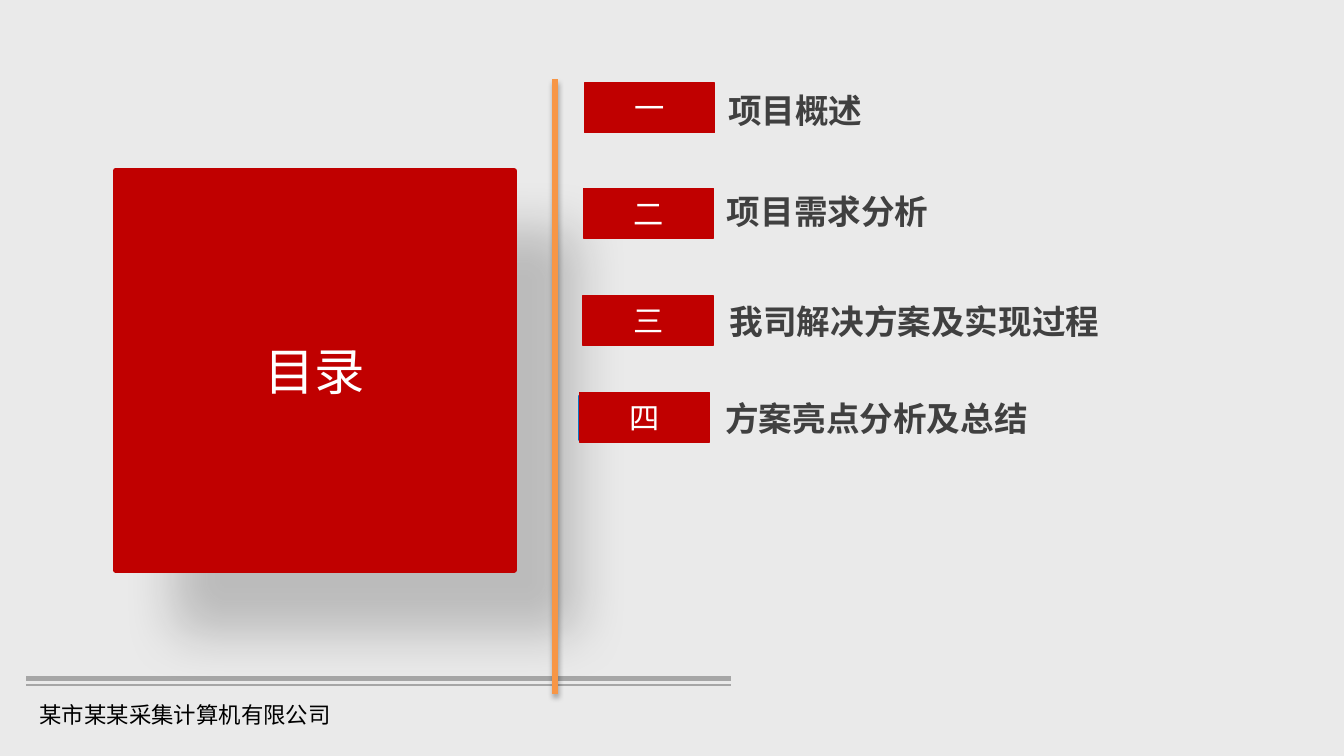
from dataclasses import dataclass

from lxml.etree import SubElement
from pptx import Presentation
from pptx.dml.color import RGBColor
from pptx.enum.shapes import MSO_CONNECTOR, MSO_SHAPE
from pptx.enum.text import MSO_ANCHOR, MSO_AUTO_SIZE, PP_ALIGN
from pptx.oxml.ns import qn
from pptx.util import Cm, Pt

COLOURS = {
    "background": "EAEAEA",
    "red": "C00000",
    "blue": "0975C2",
    "orange": "F79646",
    "rule": "A6A6A6",
    "label": "404040",
    "white": "FFFFFF",
    "black": "000000",
}
CJK_FONT = "Noto Sans CJK SC"
BADGE_WIDTH, BADGE_HEIGHT = 2.46, 0.94


@dataclass(frozen=True)
class Entry:
    """One line of the contents; lengths in centimetres."""
    number: str
    label: str
    badge_left: float
    badge_top: float
    label_left: float
    label_top: float
    label_width: float


@dataclass(frozen=True)
class Shadow:
    """Opacity in percent, blur and distance in points, angle in degrees."""
    opacity: int
    blur: float
    distance: float
    angle: int


ENTRIES = [
    Entry("一", "项目概述", 11.05, 1.57, 13.51, 1.57, 3.07),
    Entry("二", "项目需求分析", 11.03, 3.56, 13.49, 3.48, 4.37),
    Entry("三", "我司解决方案及实现过程", 11.02, 5.59, 13.54, 5.56, 7.57),
    Entry("四", "方案亮点分析及总结", 10.95, 7.42, 13.46, 7.39, 6.27),
]


def colour(name: str) -> RGBColor:
    return RGBColor.from_string(COLOURS[name])


def set_shadow(shape, shadow: Shadow | None) -> None:
    """Give the shape its own effect list, empty when there is no shadow."""
    effects = SubElement(shape.element.spPr, qn("a:effectLst"))
    if shadow:
        outer = SubElement(
            effects, qn("a:outerShdw"), blurRad=str(Pt(shadow.blur)),
            dist=str(Pt(shadow.distance)), dir=str(shadow.angle * 60000),
            algn="ctr", rotWithShape="0")
        tint = SubElement(outer, qn("a:srgbClr"), val=COLOURS["black"])
        SubElement(tint, qn("a:alpha"), val=str(shadow.opacity * 1000))


def paint(shape, name: str, line_width: float) -> None:
    shape.fill.solid()
    shape.fill.fore_color.rgb = colour(name)
    if line_width:
        shape.line.color.rgb = colour(name)
        shape.line.width = Pt(line_width)
    else:
        shape.line.fill.background()


def write(shape, text: str, size: float, ink: str, *, bold: bool = False,
          font: str = CJK_FONT, align=PP_ALIGN.LEFT, **frame_format) -> None:
    frame = shape.text_frame
    for name, value in frame_format.items():
        setattr(frame, name, value)
    para = frame.paragraphs[0]
    para.alignment = align
    span = para.add_run()
    span.text = text
    for name, value in {"size": Pt(size), "bold": bold, "name": font}.items():
        setattr(span.font, name, value)
    span.font.color.rgb = colour(ink)
    SubElement(span.font._element, qn("a:ea"), typeface=CJK_FONT)


def add_rectangle(page, left: float, top: float, width: float, height: float,
                  name: str, line_width: float = 0):
    shape = page.shapes.add_shape(
        MSO_SHAPE.RECTANGLE, Cm(left), Cm(top), Cm(width), Cm(height))
    shape.shadow.inherit = False
    paint(shape, name, line_width)
    return shape


def add_line(page, start: tuple[float, float], end: tuple[float, float],
             name: str, width: float, shadow: Shadow | None = None) -> None:
    line = page.shapes.add_connector(
        MSO_CONNECTOR.STRAIGHT, *map(Cm, (*start, *end)))
    line.line.color.rgb = colour(name)
    line.line.width = Pt(width)
    set_shadow(line, shadow)


def add_label(page, left: float, top: float, width: float, height: float,
              text: str, size: float, ink: str, *, bold: bool = False,
              wrap: bool = True) -> None:
    box = page.shapes.add_textbox(Cm(left), Cm(top), Cm(width), Cm(height))
    write(box, text, size, ink, bold=bold, word_wrap=wrap,
          auto_size=MSO_AUTO_SIZE.SHAPE_TO_FIT_TEXT)


def add_title_circle(page) -> None:
    """Turn the title placeholder into the round heading, on top so far."""
    title = page.shapes.title
    place = {"left": 2.18, "top": 3.23, "width": 7.54, "height": 7.54}
    for name, value in place.items():
        setattr(title, name, Cm(value))
    outline = SubElement(title.element.spPr, qn("a:prstGeom"), prst="ellipse")
    SubElement(outline, qn("a:avLst"))
    paint(title, "red", 3)
    set_shadow(title, Shadow(20, 29, 46, 45))
    write(title, "目录", 27, "white", font="Arial", align=PP_ALIGN.CENTER,
          vertical_anchor=MSO_ANCHOR.MIDDLE, auto_size=MSO_AUTO_SIZE.NONE,
          margin_left=0, margin_right=0,
          margin_top=Cm(0.1), margin_bottom=Cm(0.1))
    title.element.getparent().append(title.element)


def add_entry(page, entry: Entry) -> None:
    add_rectangle(page, entry.badge_left, entry.badge_top + 0.06,
                  2.44, 0.84, "blue", 1)
    badge = add_rectangle(page, entry.badge_left, entry.badge_top,
                          BADGE_WIDTH, BADGE_HEIGHT, "red", 0.75)
    write(badge, entry.number, 16.2, "white", align=PP_ALIGN.CENTER,
          vertical_anchor=MSO_ANCHOR.TOP, word_wrap=True,
          auto_size=MSO_AUTO_SIZE.SHAPE_TO_FIT_TEXT)
    add_label(page, entry.label_left, entry.label_top, entry.label_width, 1.02,
              entry.label, 18, "label", bold=True, wrap=False)


def main() -> None:
    deck = Presentation()
    deck.slide_width, deck.slide_height = Cm(25.4), Cm(14.29)
    page = deck.slides.add_slide(deck.slide_layouts[5])

    add_rectangle(page, 0, -0.1, 25.4, 14.4, "background")
    for top, width in ((12.82, 2.75), (12.95, 0.75)):
        add_line(page, (0.5, top), (13.82, top), "rule", width)
    add_label(page, 0.5, 13.13, 13.26, 0.86,
              "某市某某采集计算机有限公司", 12, "black")

    add_title_circle(page)
    add_line(page, (10.49, 13.11), (10.49, 1.5), "orange", 3,
             Shadow(35, 3.1, 1.8, 90))
    for entry in ENTRIES:
        add_entry(page, entry)

    deck.save("out.pptx")


if __name__ == "__main__":
    main()
